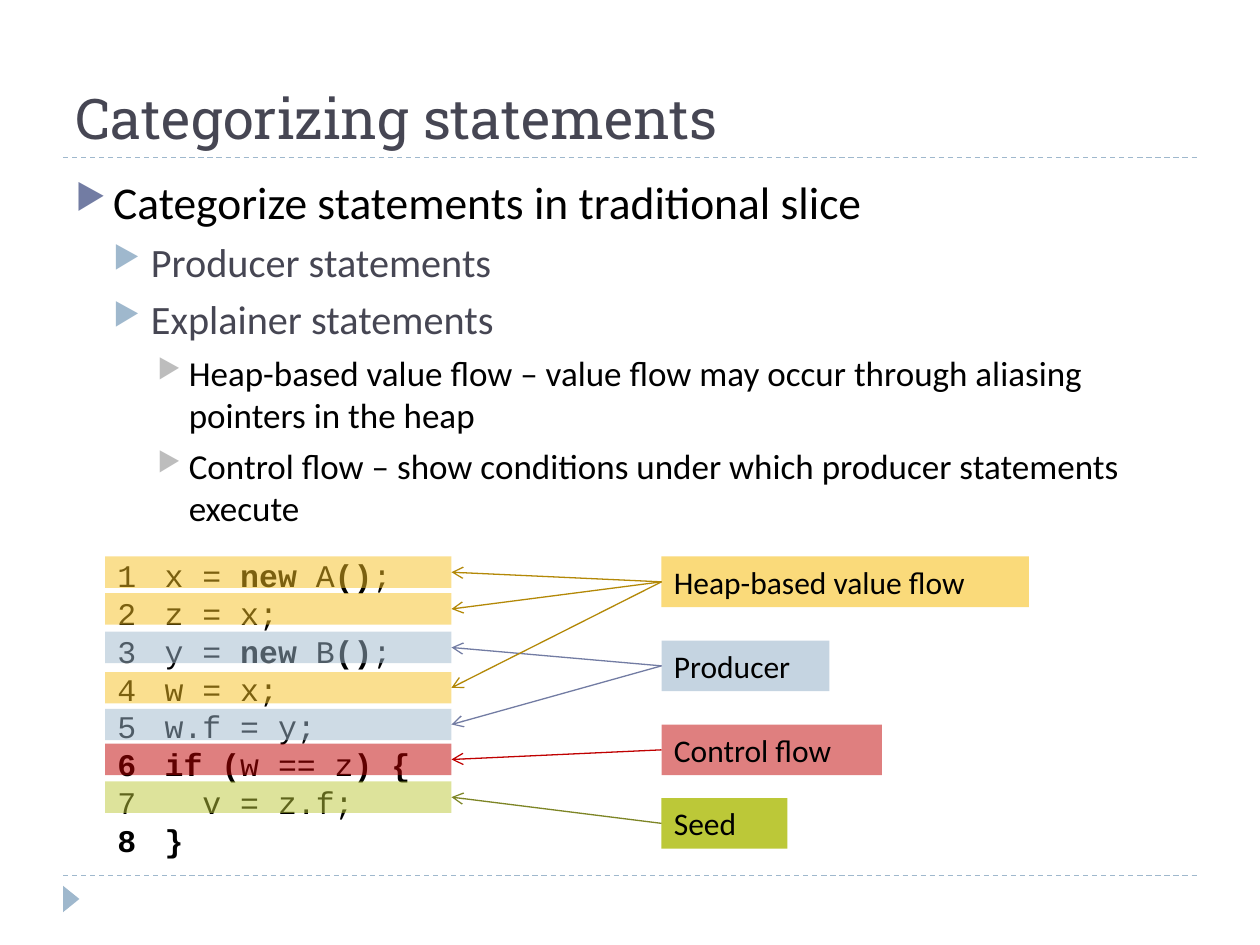
from lxml.etree import SubElement
from pptx import Presentation
from pptx.dml.color import RGBColor
from pptx.enum.dml import MSO_LINE_DASH_STYLE as Dash
from pptx.enum.shapes import MSO_CONNECTOR as Connector, MSO_SHAPE as Shape
from pptx.enum.text import MSO_ANCHOR as Anchor, PP_ALIGN as Align
from pptx.oxml.ns import qn
from pptx.util import Pt

TITLE = "Categorizing statements"
OUTLINE = [
    (0, "Categorize statements in traditional slice"),
    (1, "Producer statements"),
    (1, "Explainer statements"),
    (2, "Heap-based value flow – value flow may occur through aliasing pointers in the heap"),
    (2, "Control flow – show conditions under which producer statements execute"),
]
LEVELS = [
    {"size": 26, "color": "000000", "bullet": "727CA3", "left": 21.6, "hang": 21.6, "before": 6},
    {"size": 23, "color": "464653", "bullet": "9FB8CD", "left": 43.2, "hang": 21.6, "before": 5},
    {"size": 20, "color": "000000", "bullet": "BDBDBD", "left": 64.8, "hang": 18, "before": 5},
]
CODE = [
    (0, [("x = ", False), ("new", True), (" A", False), ("()", True), (";", False)]),
    (0, [("z = x;", False)]),
    (0, [("y = ", False), ("new", True), (" B", False), ("()", True), (";", False)]),
    (0, [("w = x;", False)]),
    (0, [("w.f = y;", False)]),
    (0, [("if (", True), ("w == z", False), (") {", True)]),
    (2, [("v = z.f;", False)]),
    (0, [("}", True)]),
]
ROW_TOPS = {1: 318, 2: 339, 3: 361, 4: 384, 5: 405, 6: 425, 7: 446.5}
CATEGORIES = [
    {"name": "Producer", "rows": [3, 5], "top": 366, "width": 96,
     "bar": "9FB8CD", "label": "C5D4E1", "alpha": 100, "arrow": "727CA3"},
    {"name": "Heap-based value flow", "rows": [1, 2, 4], "top": 318, "width": 210,
     "bar": "F7C120", "label": "FADA7A", "alpha": 100, "arrow": "B38807"},
    {"name": "Seed", "rows": [7], "top": 456, "width": 72,
     "bar": "BCC838", "label": "BCC838", "alpha": 100, "arrow": "7D8525"},
    {"name": "Control flow", "rows": [6], "top": 414, "width": 126,
     "bar": "C00000", "label": "C00000", "alpha": 50, "arrow": "C00000"},
]
CODE_LEFT, BAR_WIDTH, BAR_HEIGHT = 60, 198, 18
LABEL_LEFT, LABEL_HEIGHT = 378, 29
CODE_HANG, CHARACTER = 27, 10.8


def color(value):
    return RGBColor.from_string(value)


def add_span(para, text, font, size, fill, bold=False):
    span = para.add_run()
    span.text = text
    for key, value in {"name": font, "size": Pt(size), "bold": bold}.items():
        setattr(span.font, key, value)
    span.font.color.rgb = color(fill)


def set_indent(para, left, hang):
    props = para._p.get_or_add_pPr()
    props.set("marL", str(Pt(left)))
    props.set("indent", str(-Pt(hang)))
    return props


def add_text_box(left, top, width, height):
    frame = page.shapes.add_textbox(Pt(left), Pt(top), Pt(width), Pt(height)).text_frame
    frame.word_wrap = True
    return frame


def paragraphs(frame, count):
    return [frame.paragraphs[0]] + [frame.add_paragraph() for _ in range(count - 1)]


def add_block(kind, left, top, width, height, fill, alpha=100):
    block = page.shapes.add_shape(kind, Pt(left), Pt(top), Pt(width), Pt(height))
    block.shadow.inherit = False
    block.fill.solid()
    block.fill.fore_color.rgb = color(fill)
    block.line.fill.background()
    if alpha < 100:
        tint = block._element.spPr.find(qn("a:solidFill"))[0]
        SubElement(tint, qn("a:alpha"), val=str(alpha * 1000))
    return block


def add_line(start, end, stroke, dash=None, arrow=False):
    line = page.shapes.add_connector(Connector.STRAIGHT, *map(Pt, start + end))
    line.line.color.rgb = color(stroke)
    line.line.width = Pt(0.75)
    if dash:
        line.line.dash_style = dash
    if arrow:
        SubElement(line.line._get_or_add_ln(), qn("a:tailEnd"), type="arrow")
    SubElement(line._element.spPr, qn("a:effectLst"))


deck = Presentation()
deck.slide_width, deck.slide_height = Pt(720), Pt(540)
page = deck.slides.add_slide(deck.slide_layouts[5])

for rule_top in (500.4, 90):
    add_line((36, rule_top), (684, rule_top), "9FB8CD", Dash.DASH)
add_block(Shape.ISOSCELES_TRIANGLE, 33.12, 509.04, 15.12, 9.36, "9FB8CD").rotation = 90

title = page.shapes.title
for key, value in {"left": 36, "top": 12, "width": 648, "height": 78}.items():
    setattr(title, key, Pt(value))
title.text_frame.vertical_anchor = Anchor.BOTTOM
title_para = title.text_frame.paragraphs[0]
title_para.alignment = Align.LEFT
add_span(title_para, TITLE, "Roboto Slab", 32, "464653")

outline = add_text_box(36, 96, 648, 216)
for para, (level, text) in zip(paragraphs(outline, len(OUTLINE)), OUTLINE):
    style = LEVELS[level]
    para.level = level
    para.space_before = Pt(style["before"])
    props = set_indent(para, style["left"], style["hang"])
    SubElement(SubElement(props, qn("a:buClr")), qn("a:srgbClr"), val=style["bullet"])
    SubElement(props, qn("a:buSzPct"), val="76000")
    SubElement(props, qn("a:buChar"), char="▶")
    add_span(para, text, "Calibri", style["size"], style["color"])

code = add_text_box(CODE_LEFT, 312, 222, 181)
code.margin_top = Pt(5.8)
for para, (depth, spans) in zip(paragraphs(code, len(CODE)), CODE):
    para.line_spacing = Pt(21.6)
    hang = CODE_HANG + depth * CHARACTER
    props = set_indent(para, hang, hang)
    SubElement(props, qn("a:buFont"), typeface="Courier New")
    SubElement(props, qn("a:buAutoNum"), type="arabicPlain")
    for text, bold in spans:
        add_span(para, text, "Courier New", 18, "000000", bold)

for item in CATEGORIES:
    for row in item["rows"]:
        add_block(Shape.RECTANGLE, CODE_LEFT, ROW_TOPS[row], BAR_WIDTH, BAR_HEIGHT, item["bar"], 50)
    label = add_block(Shape.RECTANGLE, LABEL_LEFT, item["top"], item["width"], LABEL_HEIGHT,
                      item["label"], item["alpha"])
    label.text_frame.word_wrap = True
    label.text_frame.vertical_anchor = Anchor.TOP
    label_para = label.text_frame.paragraphs[0]
    label_para.alignment = Align.LEFT
    add_span(label_para, item["name"], "Calibri", 18, "000000")
    for row in item["rows"]:
        add_line((LABEL_LEFT, item["top"] + LABEL_HEIGHT / 2),
                 (CODE_LEFT + BAR_WIDTH, ROW_TOPS[row] + BAR_HEIGHT / 2), item["arrow"], arrow=True)

deck.save("out.pptx")
